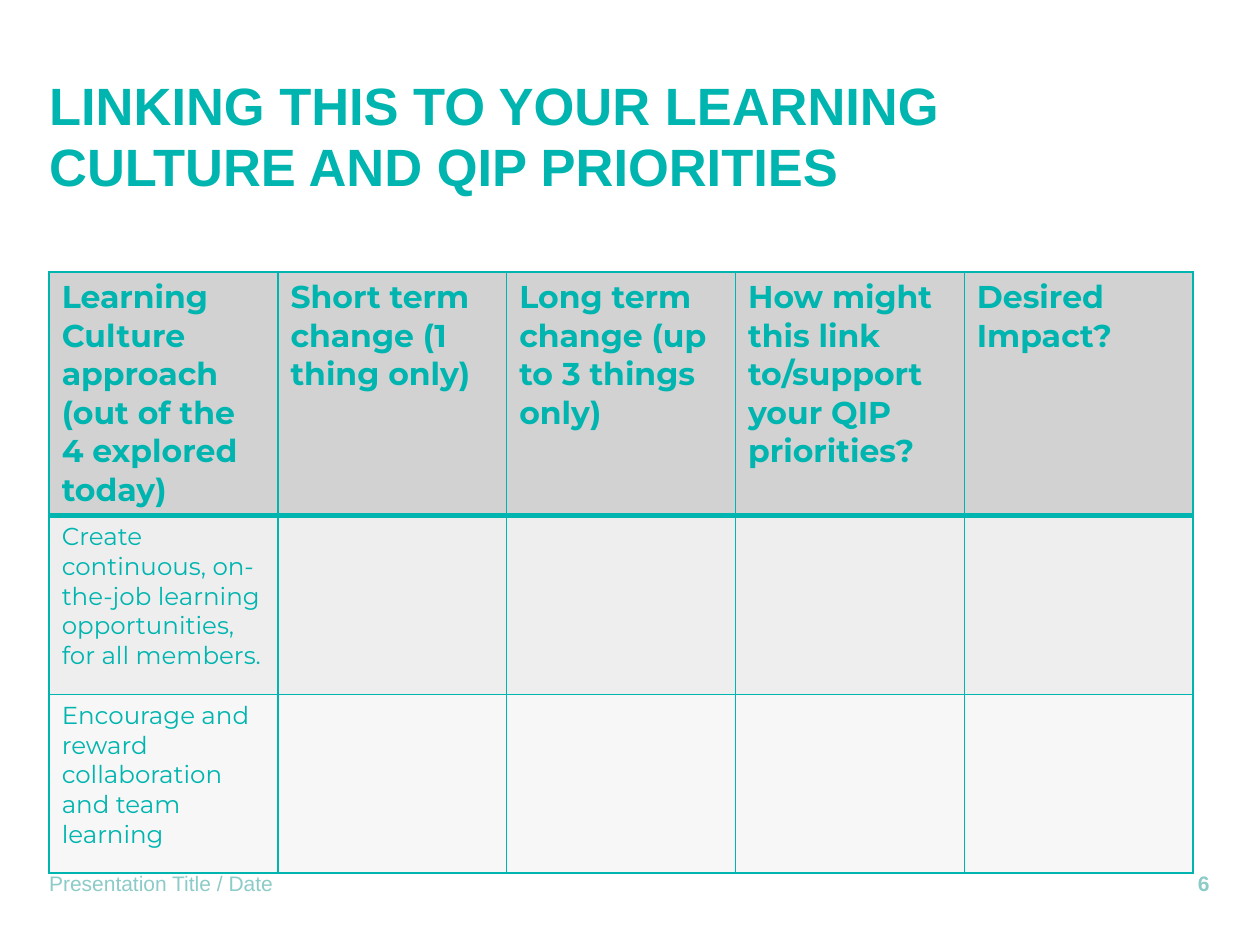
from dataclasses import dataclass, field

from lxml import etree
from pptx import Presentation
from pptx.dml.color import RGBColor
from pptx.enum.text import MSO_ANCHOR, PP_ALIGN
from pptx.oxml.ns import qn
from pptx.slide import Slide
from pptx.table import _Cell
from pptx.text.text import _Paragraph
from pptx.util import Inches, Pt

TOP, MIDDLE = MSO_ANCHOR.TOP, MSO_ANCHOR.MIDDLE
LEFT, RIGHT = PP_ALIGN.LEFT, PP_ALIGN.RIGHT
UNIT = Inches(0.1)
PAGE_COLUMNS, PAGE_ROWS = 100, 75
MARGIN = 3.9

COLORS = {
    "teal": "00B5AF",
    "pale_teal": "8CCBC7",
    "header": "D2D2D2",
    "odd_row": "EEEEEE",
    "even_row": "F7F7F7",
}
TITLE_FONT = {"name": "Arial", "size": Pt(30), "bold": True}
FOOTER_FONT = {"name": "Arial", "size": Pt(12), "bold": False}
NUMBER_FONT = {**FOOTER_FONT, "bold": True}
HEADER_FONT = {"name": "Montserrat", "size": Pt(18), "bold": True}
BODY_FONT = {"name": "Montserrat", "size": Pt(14), "bold": False}


@dataclass
class Label:
    text: str
    area: tuple[float, float, float, float]
    font: dict
    color: str
    frame: dict = field(default_factory=dict)
    paragraph: dict = field(default_factory=dict)


@dataclass
class Row:
    texts: list[str]
    height: float
    fill: str
    font: dict
    top_line: float
    bottom_line: float


LABELS = [
    Label("LINKING THIS TO YOUR LEARNING CULTURE AND QIP PRIORITIES",
          (MARGIN, 5.9, 92.1, 7.9), TITLE_FONT, "teal",
          {"vertical_anchor": TOP, "margin_left": 0, "margin_top": 0},
          {"line_spacing": Pt(35)}),
    Label("Presentation Title / Date", (MARGIN, 69.1, 63, 2), FOOTER_FONT,
          "pale_teal", {"vertical_anchor": MIDDLE, "margin_left": 0},
          {"alignment": LEFT}),
    Label("6", (90.4, 69.1, 5.6, 2), NUMBER_FONT, "pale_teal",
          {"vertical_anchor": MIDDLE, "margin_right": 0},
          {"alignment": RIGHT}),
]
ROWS = [
    Row(["Learning Culture approach (out of the 4 explored today)",
         "Short term change (1 thing only)",
         "Long term change (up to 3 things only)",
         "How might this link to/support your QIP priorities?",
         "Desired Impact?"], 10.4, "header", HEADER_FONT, 1, 3),
    Row(["Create continuous, on-the-job learning opportunities, for all members."],
        14.2, "odd_row", BODY_FONT, 3, 1),
    Row(["Encourage and reward collaboration and team learning"],
        14.2, "even_row", BODY_FONT, 1, 1),
]
TABLE_COLUMNS = len(ROWS[0].texts)
TABLE_TOP, TABLE_WIDTH = 21.6, 90.8


def units(count: float) -> int:
    return round(count * UNIT)


def rgb(name: str) -> RGBColor:
    return RGBColor.from_string(COLORS[name])


def set_values(target: object, values: dict) -> None:
    for name, value in values.items():
        setattr(target, name, value)


def write(para: _Paragraph, text: str, font: dict, color: str) -> None:
    span = para.add_run()
    span.text = text
    set_values(span.font, font)
    span.font.color.rgb = rgb(color)


def draw_label(page: Slide, label: Label) -> None:
    box = page.shapes.add_textbox(*map(units, label.area))
    frame = box.text_frame
    set_values(frame, {"word_wrap": True, **label.frame})
    para = frame.paragraphs[0]
    set_values(para, label.paragraph)
    write(para, label.text, label.font, label.color)


def draw_borders(cell: _Cell, row: Row) -> None:
    properties = cell._tc.get_or_add_tcPr()
    widths = {"lnL": 1, "lnR": 1, "lnT": row.top_line, "lnB": row.bottom_line}
    for position, (side, width) in enumerate(widths.items()):
        line = etree.Element(qn(f"a:{side}"), w=str(Pt(width)))
        paint = etree.SubElement(line, qn("a:solidFill"))
        etree.SubElement(paint, qn("a:srgbClr"), val=COLORS["teal"])
        properties.insert(position, line)


def draw_table(page: Slide) -> None:
    height = sum(row.height for row in ROWS)
    table = page.shapes.add_table(
        len(ROWS), TABLE_COLUMNS,
        *map(units, (MARGIN, TABLE_TOP, TABLE_WIDTH, height))).table
    for column in table.columns:
        column.width = units(TABLE_WIDTH / TABLE_COLUMNS)
    for index, row in enumerate(ROWS):
        table.rows[index].height = units(row.height)
        for number in range(TABLE_COLUMNS):
            cell = table.cell(index, number)
            cell.fill.solid()
            cell.fill.fore_color.rgb = rgb(row.fill)
            draw_borders(cell, row)
            if number < len(row.texts):
                write(cell.text_frame.paragraphs[0], row.texts[number],
                      row.font, "teal")


def main() -> None:
    deck = Presentation()
    deck.slide_width = units(PAGE_COLUMNS)
    deck.slide_height = units(PAGE_ROWS)
    page = deck.slides.add_slide(deck.slide_layouts[6])
    draw_table(page)
    for label in LABELS:
        draw_label(page, label)
    deck.save("out.pptx")


if __name__ == "__main__":
    main()
